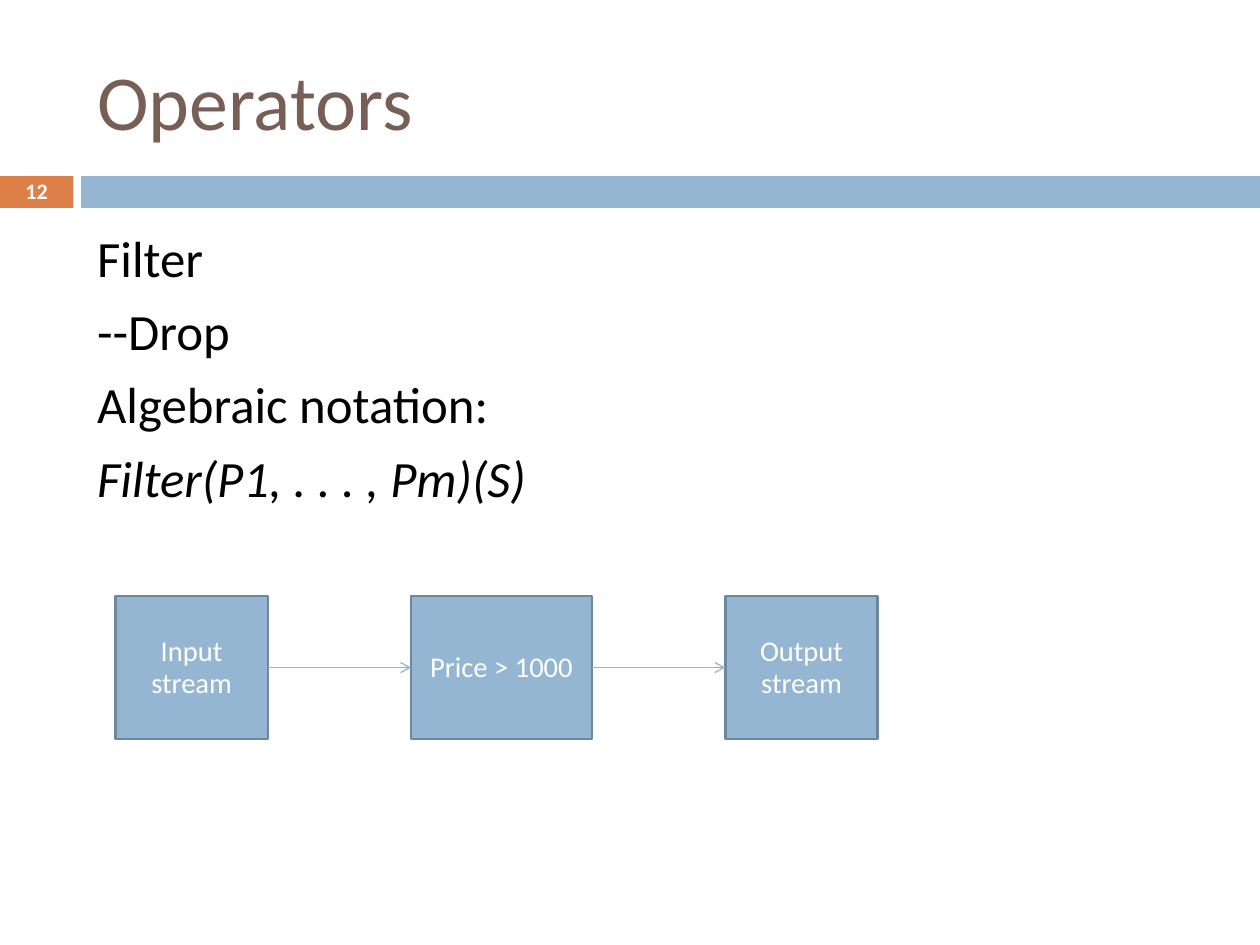
from dataclasses import dataclass, field
from itertools import pairwise
from typing import Any

from lxml import etree
from pptx import Presentation
from pptx import util as u
from pptx.dml.color import RGBColor
from pptx.enum import shapes, text
from pptx.oxml import ns


@dataclass(frozen=True)
class Theme:
    font: str = "Calibri"
    blue: RGBColor = RGBColor(0x94, 0xB6, 0xD2)
    edge: RGBColor = RGBColor(0x6D, 0x87, 0x9B)
    orange: RGBColor = RGBColor(0xDD, 0x80, 0x47)
    brown: RGBColor = RGBColor(0x77, 0x5F, 0x55)
    black: RGBColor = RGBColor(0, 0, 0)
    white: RGBColor = RGBColor(255, 255, 255)
    heading_size: float = 49
    body_size: float = 32
    stage_size: float = 18
    number_size: float = 13.9


@dataclass(frozen=True)
class Box:
    left: float
    top: float
    width: float
    height: float

    def lengths(self) -> list[u.Pt]:
        return [u.Pt(n) for n in (self.left, self.top, self.width, self.height)]


@dataclass(frozen=True)
class Line:
    wording: str
    size: float
    color: RGBColor
    font: dict[str, Any] = field(default_factory=dict)
    paragraph: dict[str, Any] = field(default_factory=dict)
    hanging: float = 0


@dataclass(frozen=True)
class Stage:
    wording: str
    left: float
    width: float


THEME = Theme()
WIDTH, HEIGHT = 793.7, 595.28
BAND_TOP, BAND_HEIGHT = 111, 20
NUMBER_WIDTH, BAND_LEFT = 46.2, 51.2
STAGE_TOP, STAGE_HEIGHT = 375.6, 89.8
MARGINS = {"margin_left": u.Pt(8), "margin_right": u.Pt(8),
           "margin_top": u.Pt(4), "margin_bottom": u.Pt(4)}
MIDDLE = {"vertical_anchor": text.MSO_ANCHOR.MIDDLE}
CENTERED = {"alignment": text.PP_ALIGN.CENTER}


def apply(target: Any, values: dict[str, Any]) -> None:
    for name, value in values.items():
        setattr(target, name, value)


def write(frame: Any, lines: list[Line], layout: dict[str, Any]) -> None:
    apply(frame, {"word_wrap": True, **layout})
    for index, line in enumerate(lines):
        paragraph = frame.add_paragraph() if index else frame.paragraphs[0]
        apply(paragraph, line.paragraph)
        if line.hanging:
            properties = paragraph._p.get_or_add_pPr()
            properties.set("marL", str(u.Pt(line.hanging)))
            properties.set("indent", str(u.Pt(-line.hanging)))
        run = paragraph.add_run()
        run.text = line.wording
        apply(run.font, {"name": THEME.font, "size": u.Pt(line.size), **line.font})
        run.font.color.rgb = line.color


def add_text(slide: Any, box: Box, lines: list[Line], layout: dict[str, Any]) -> None:
    write(slide.shapes.add_textbox(*box.lengths()).text_frame, lines, {**MARGINS, **layout})


def add_rectangle(slide: Any, box: Box, fill: RGBColor, edge: RGBColor | None = None) -> Any:
    rectangle = slide.shapes.add_shape(shapes.MSO_SHAPE.RECTANGLE, *box.lengths())
    rectangle.shadow.inherit = False
    rectangle.fill.solid()
    rectangle.fill.fore_color.rgb = fill
    if edge is None:
        rectangle.line.fill.background()
    else:
        rectangle.line.color.rgb = edge
        rectangle.line.width = u.Pt(1.5)
    return rectangle


def add_stage(slide: Any, stage: Stage) -> Any:
    box = Box(stage.left, STAGE_TOP, stage.width, STAGE_HEIGHT)
    rectangle = add_rectangle(slide, box, THEME.blue, THEME.edge)
    label = Line(stage.wording, THEME.stage_size, THEME.white,
                 paragraph={**CENTERED, "line_spacing": 0.93})
    write(rectangle.text_frame, [label], MIDDLE)
    return rectangle


def add_flow(slide: Any, source: Any, target: Any) -> None:
    flow = slide.shapes.add_connector(shapes.MSO_CONNECTOR.STRAIGHT, 0, 0, 0, 0)
    flow.begin_connect(source, 3)
    flow.end_connect(target, 1)
    flow.line.color.rgb = THEME.blue
    flow.line.width = u.Pt(0.79)
    etree.SubElement(flow.line._get_or_add_ln(), ns.qn("a:tailEnd"), type="arrow")
    etree.SubElement(flow._element.spPr, ns.qn("a:effectLst"))


def main() -> None:
    deck = Presentation()
    apply(deck, {"slide_width": u.Pt(WIDTH), "slide_height": u.Pt(HEIGHT)})
    slide = deck.slides.add_slide(deck.slide_layouts[6])

    add_rectangle(slide, Box(0, BAND_TOP, NUMBER_WIDTH, BAND_HEIGHT), THEME.orange)
    add_rectangle(slide, Box(BAND_LEFT, BAND_TOP, WIDTH - BAND_LEFT, BAND_HEIGHT), THEME.blue)

    heading = Line("Operators", THEME.heading_size, THEME.brown)
    add_text(slide, Box(53.2, 19.8, 707.8, 85.7), [heading], MIDDLE)
    number = Line("12", THEME.number_size, THEME.white, {"bold": True}, CENTERED)
    add_text(slide, Box(0, 109.8, NUMBER_WIDTH, 20.8), [number], MIDDLE)

    notation = [("Filter", {}), ("--Drop", {}), ("Algebraic notation:", {}),
                ("Filter(P1, . . . , Pm)(S)", {"italic": True})]
    body = [Line(wording, THEME.body_size, THEME.black, font,
                 {"space_before": u.Pt(7.7)}, hanging=40.3)
            for wording, font in notation]
    add_text(slide, Box(53.2, 138.8, 707.8, 390.2), body, {})

    pipeline = [Stage("Input stream", 72.7, 96),
                Stage("Price > 1000", 259, 113.8),
                Stage("Output stream", 456.9, 96)]
    stages = [add_stage(slide, stage) for stage in pipeline]
    for source, target in pairwise(stages):
        add_flow(slide, source, target)

    deck.save("out.pptx")


if __name__ == "__main__":
    main()
